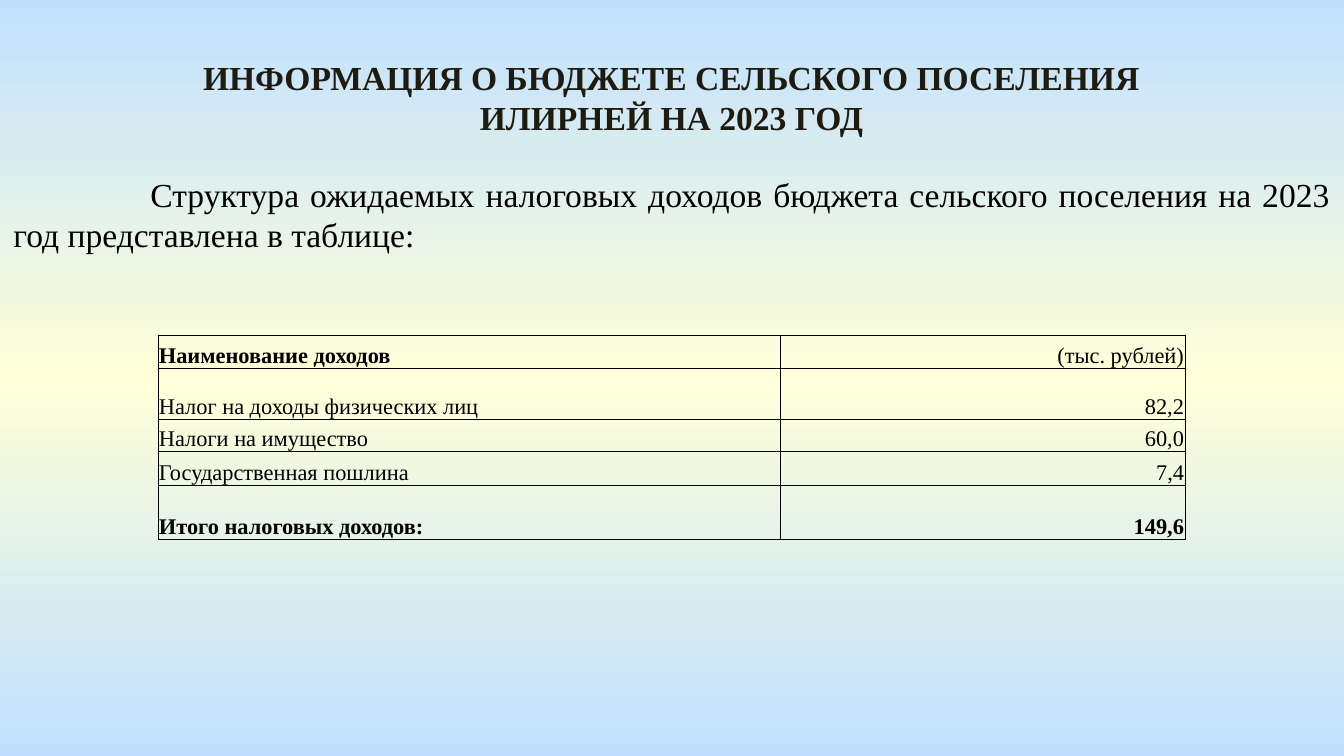
from lxml import etree
from pptx import Presentation
from pptx import util as u
from pptx.dml.color import RGBColor
from pptx.enum import text
from pptx.oxml.ns import qn

EMU_PER_PX = 914400 / 134.4
FONT = "Times New Roman"
COLORS = {
    "sky": "C1E0FF",
    "cream": "FFFFD9",
    "title": "1E1C11",
    "black": "000000",
}
COLUMN_WIDTHS = [622, 405]
# Name, value, row height in px, bold flags of the two cells
ROWS = [
    ("Наименование доходов", "(тыс. рублей)", 33, (True, False)),
    ("Налог на доходы физических лиц", "82,2", 52, (False, False)),
    ("Налоги на имущество", "60,0", 32, (False, False)),
    ("Государственная пошлина", "7,4", 34, (False, False)),
    ("Итого налоговых доходов:", "149,6", 54, (True, True)),
]


def px(length):
    return u.Emu(round(length * EMU_PER_PX))


def add_color(parent, color):
    etree.SubElement(parent, qn("a:srgbClr"), val=COLORS[color])


def set_background(slide):
    """Vertical gradient, sky to cream and back."""
    fill = slide.background.fill
    fill.gradient()
    fill.gradient_angle = 90
    stops = slide.background._cSld.find(".//" + qn("a:gsLst"))
    for stop in list(stops):
        stops.remove(stop)
    for percent, color in ((0, "sky"), (50, "cream"), (100, "sky")):
        stop = etree.SubElement(stops, qn("a:gs"), pos=str(percent * 1000))
        add_color(stop, color)


def format_paragraph(paragraph, size, color, alignment, bold=False):
    paragraph.alignment = alignment
    paragraph.space_before = u.Pt(0)
    font = paragraph.font
    font.name, font.size, font.bold = FONT, u.Pt(size), bold
    font.color.rgb = RGBColor.from_string(COLORS[color])


def fill_placeholder(shape, box, content, color, alignment, bold=False):
    shape.left, shape.top, shape.width, shape.height = map(px, box)
    frame = shape.text_frame
    frame.text = content
    frame.word_wrap = True
    frame.auto_size = text.MSO_AUTO_SIZE.NONE
    frame.vertical_anchor = text.MSO_ANCHOR.TOP
    paragraph = frame.paragraphs[0]
    format_paragraph(paragraph, 18, color, alignment, bold)
    return paragraph


def indent_first_line(paragraph, indent):
    """Replace the bullet with a first-line indent."""
    properties = paragraph._p.get_or_add_pPr()
    properties.set("marL", "0")
    properties.set("indent", str(px(indent)))
    etree.SubElement(properties, qn("a:buNone"))
    # The schema wants the bullet before the default run properties
    properties.append(properties.find(qn("a:defRPr")))


def add_borders(cell):
    properties = cell._tc.get_or_add_tcPr()
    for index, side in enumerate(("lnL", "lnR", "lnT", "lnB")):
        line = etree.Element(qn("a:" + side), w=str(u.Pt(0.5)))
        add_color(etree.SubElement(line, qn("a:solidFill")), "black")
        properties.insert(index, line)


def format_cell(cell, content, alignment, bold):
    cell.text = content
    cell.vertical_anchor = text.MSO_ANCHOR.BOTTOM
    cell.margin_left = cell.margin_right = cell.margin_top = px(1)
    cell.margin_bottom = 0
    cell.fill.background()
    add_borders(cell)
    format_paragraph(cell.text_frame.paragraphs[0], 12, "black", alignment, bold)


def add_income_table(slide, left, top):
    heights = [row[2] for row in ROWS]
    table = slide.shapes.add_table(
        len(ROWS), len(COLUMN_WIDTHS), px(left), px(top),
        px(sum(COLUMN_WIDTHS)), px(sum(heights))).table
    table.first_row = table.horz_banding = False
    for column, width in zip(table.columns, COLUMN_WIDTHS):
        column.width = px(width)
    alignments = (text.PP_ALIGN.JUSTIFY, text.PP_ALIGN.RIGHT)
    for row, (name, value, height, bolds) in zip(table.rows, ROWS):
        row.height = px(height)
        for cell, content, alignment, bold in zip(
                row.cells, (name, value), alignments, bolds):
            format_cell(cell, content, alignment, bold)


def main():
    presentation = Presentation()
    presentation.slide_width, presentation.slide_height = px(1344), px(756)
    slide = presentation.slides.add_slide(presentation.slide_layouts[1])
    set_background(slide)
    fill_placeholder(
        slide.shapes.title, (152, 50, 1039, 95),
        "ИНФОРМАЦИЯ О БЮДЖЕТЕ СЕЛЬСКОГО ПОСЕЛЕНИЯ ИЛИРНЕЙ НА 2023 ГОД",
        "title", text.PP_ALIGN.CENTER, bold=True)
    introduction = fill_placeholder(
        slide.placeholders[1], (0, 167, 1344, 95),
        "Структура ожидаемых налоговых доходов бюджета сельского поселения "
        "на 2023 год представлена в таблице:",
        "black", text.PP_ALIGN.JUSTIFY)
    indent_first_line(introduction, 137)
    add_income_table(slide, 158, 335)
    presentation.save("out.pptx")


if __name__ == "__main__":
    main()
